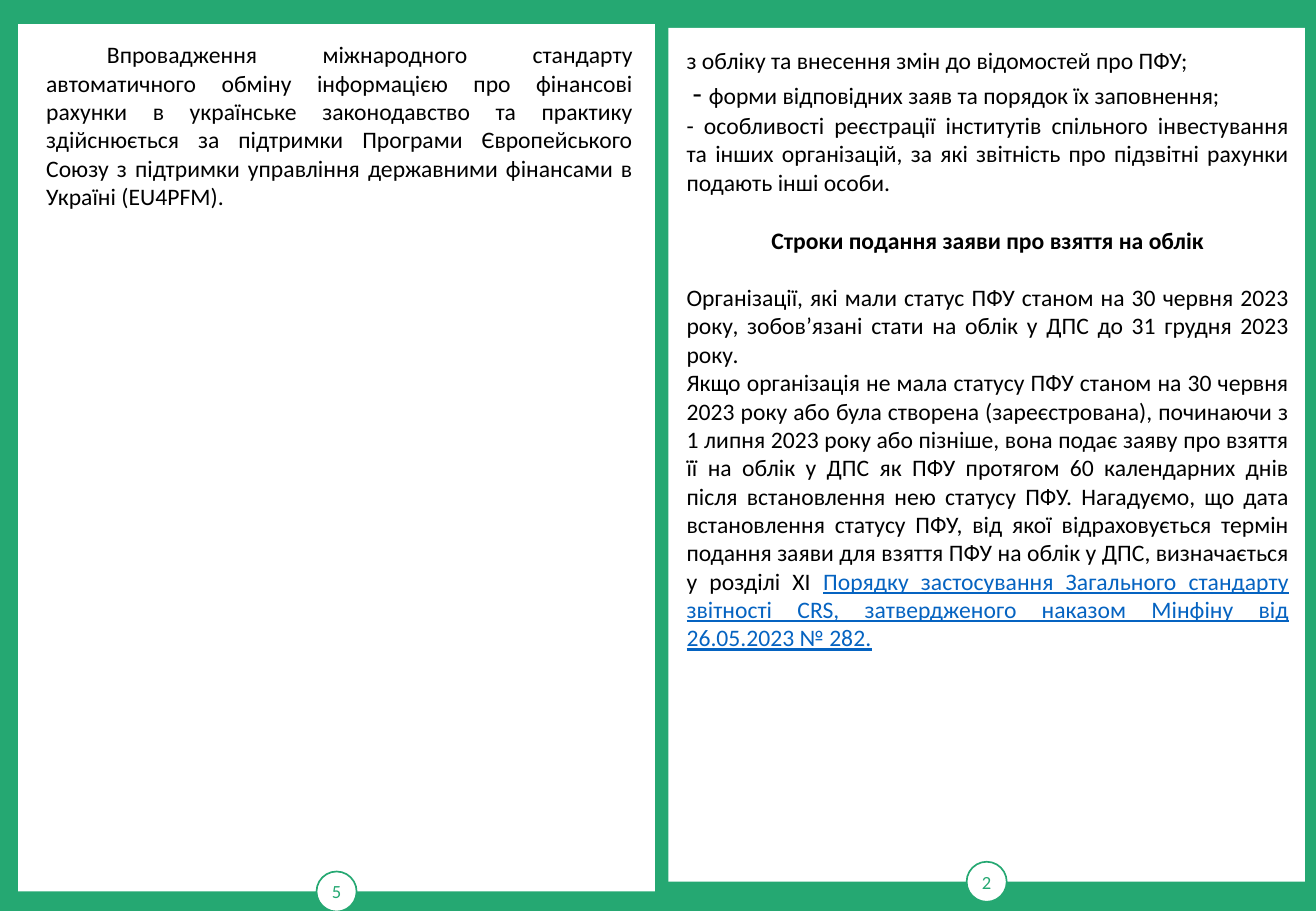
import pptx
import pptx.dml.color
import pptx.enum.shapes
import pptx.enum.text
import pptx.oxml.ns
import pptx.util
import lxml.etree

COLUMNS, ROWS = 1083, 750
SLIDE_WIDTH = pptx.util.Inches(10.83)
SLIDE_HEIGHT = pptx.util.Inches(7.5)
COLORS = {"green": "25A872", "white": "FFFFFF", "black": "000000", "link": "0563C1"}
FONT = "Calibri"
BADGE_SIZE = 33
ALIGN = pptx.enum.text.PP_ALIGN
ANCHOR = pptx.enum.text.MSO_ANCHOR
SHAPE = pptx.enum.shapes.MSO_SHAPE

SUPPORT_TEXT = (
    "Впровадження міжнародного стандарту автоматичного обміну інформацією про "
    "фінансові рахунки в українське законодавство та практику здійснюється за "
    "підтримки Програми Європейського Союзу з підтримки управління державними "
    "фінансами в Україні (EU4PFM)."
)
REGISTRATION_TEXT = "з обліку та внесення змін до відомостей про ПФУ;"
FORMS_TEXT = "форми відповідних заяв та порядок їх заповнення;"
FEATURES_TEXT = (
    "- особливості реєстрації інститутів спільного інвестування та інших "
    "організацій, за які звітність про підзвітні рахунки подають інші особи."
)
HEADING_TEXT = "Строки подання заяви про взяття на облік"
EXISTING_TEXT = (
    "Організації, які мали статус ПФУ станом на 30 червня 2023 року, "
    "зобов’язані стати на облік у ДПС до 31 грудня 2023 року."
)
NEW_TEXT = (
    "Якщо організація не мала статусу ПФУ станом на 30 червня 2023 року або була "
    "створена (зареєстрована), починаючи з 1 липня 2023 року або пізніше, вона "
    "подає заяву про взяття її на облік у ДПС як ПФУ протягом 60 календарних днів "
    "після встановлення нею статусу ПФУ. Нагадуємо, що дата встановлення статусу "
    "ПФУ, від якої відраховується термін подання заяви для взяття ПФУ на облік у "
    "ДПС, визначається у розділі ХІ "
)
ORDER_TEXT = (
    "Порядку застосування Загального стандарту звітності CRS, затвердженого "
    "наказом Мінфіну від 26.05.2023 № 282."
)


def color(name):
    return pptx.dml.color.RGBColor.from_string(COLORS[name])


def across(columns):
    return round(SLIDE_WIDTH * columns / COLUMNS)


def down(rows):
    return round(SLIDE_HEIGHT * rows / ROWS)


def add_span(para, text, size=14, ink="black", bold=False, underline=False):
    span = para.add_run()
    span.text = text
    span.font.name = FONT
    span.font.size = pptx.util.Pt(size)
    span.font.color.rgb = color(ink)
    span.font.bold = bold
    span.font.underline = underline


def add_para(frame, align=ALIGN.JUSTIFY, first_indent=0):
    para = frame.paragraphs[0]
    if para.runs:
        para = frame.add_paragraph()
    para.alignment = align
    para.space_before = pptx.util.Pt(0)
    para.line_spacing = 1.0
    properties = para._p.get_or_add_pPr()
    properties.set("marL", "0")
    properties.set("indent", str(across(first_indent)))
    lxml.etree.SubElement(properties, pptx.oxml.ns.qn("a:buNone"))
    return para


def place_text(page, index, box):
    holder = page.placeholders[index]
    left, top, width, height = box
    holder.left, holder.top = across(left), down(top)
    holder.width, holder.height = across(width), down(height)
    page.shapes._spTree.append(holder._element)
    frame = holder.text_frame
    frame.word_wrap = True
    frame.auto_size = pptx.enum.text.MSO_AUTO_SIZE.NONE
    frame.vertical_anchor = ANCHOR.TOP
    return frame


def add_plain_shape(page, kind, box):
    left, top, width, height = box
    shape = page.shapes.add_shape(
        kind, across(left), down(top), across(width), down(height)
    )
    shape.shadow.inherit = False
    shape.fill.solid()
    shape.fill.fore_color.rgb = color("white")
    shape.line.fill.background()
    return shape


def add_panel(page, box, number):
    left, top, width, height = box
    add_plain_shape(page, SHAPE.RECTANGLE, box)
    badge_left = left + (width - BADGE_SIZE) / 2
    badge_top = top + height - BADGE_SIZE / 2
    badge = add_plain_shape(
        page, SHAPE.OVAL, (badge_left, badge_top, BADGE_SIZE, BADGE_SIZE)
    )
    badge.line.color.rgb = color("green")
    badge.line.width = pptx.util.Pt(1)
    frame = badge.text_frame
    frame.word_wrap = False
    frame.vertical_anchor = ANCHOR.MIDDLE
    para = frame.paragraphs[0]
    para.alignment = ALIGN.CENTER
    add_span(para, number, size=11, ink="green")


def add_support_page(page, box):
    left, top, width, height = box
    add_panel(page, box, "5")
    frame = place_text(page, 1, (left + 13, top + 8, width - 21, 199))
    add_span(add_para(frame, first_indent=50), SUPPORT_TEXT)


def add_terms_page(page, box):
    left, top, width, height = box
    text_left, text_width = left + 5, width - 8
    add_panel(page, box, "2")

    rules = place_text(page, 2, (text_left, top + 10, text_width, 135))
    add_span(add_para(rules), REGISTRATION_TEXT)
    forms = add_para(rules, first_indent=5)
    add_span(forms, "- ", size=18)
    add_span(forms, FORMS_TEXT)
    add_span(add_para(rules), FEATURES_TEXT)

    heading = place_text(page, 0, (text_left, top + 158, text_width, 34))
    add_span(add_para(heading, align=ALIGN.CENTER), HEADING_TEXT, bold=True)

    terms = place_text(page, 4, (text_left, top + 205, text_width, 320))
    add_span(add_para(terms), EXISTING_TEXT)
    new_bodies = add_para(terms)
    add_span(new_bodies, NEW_TEXT)
    add_span(new_bodies, ORDER_TEXT, ink="link", underline=True)


def main():
    deck = pptx.Presentation()
    deck.slide_width, deck.slide_height = SLIDE_WIDTH, SLIDE_HEIGHT
    page = deck.slides.add_slide(deck.slide_layouts.get_by_name("Comparison"))
    page.background.fill.solid()
    page.background.fill.fore_color.rgb = color("green")
    spare = page.placeholders[3]._element
    spare.getparent().remove(spare)
    add_support_page(page, (15, 20, 524, 714))
    add_terms_page(page, (550, 23, 524, 703))
    deck.save("out.pptx")


if __name__ == "__main__":
    main()
